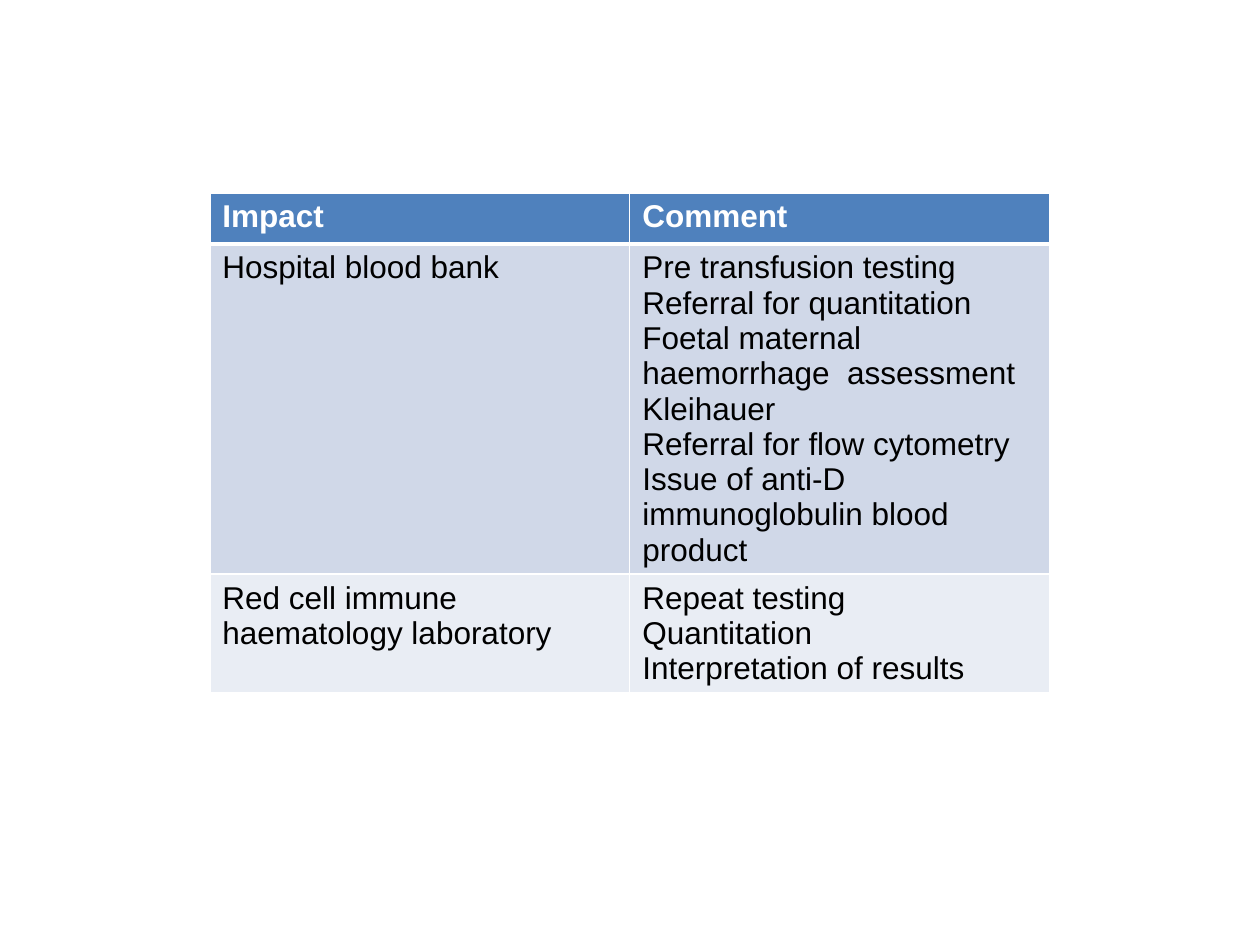
from lxml import etree
from pptx import Presentation
from pptx.dml.color import RGBColor
from pptx.oxml.ns import qn
from pptx.util import Cm, Pt

WHITE, BLACK = "FFFFFF", "000000"
HEADER_FILL, BAND_FILLS = "4F81BD", ("D0D8E8", "E9EDF4")
BORDER_TAGS = ("a:lnL", "a:lnR", "a:lnT", "a:lnB")

IMPACTS = [
    (["Impact"], ["Comment"]),
    (
        ["Hospital blood bank"],
        [
            "Pre transfusion testing",
            "Referral for quantitation",
            "Foetal maternal haemorrhage  assessment Kleihauer",
            "Referral for flow cytometry",
            "Issue of anti-D immunoglobulin blood product",
        ],
    ),
    (
        ["Red cell immune haematology laboratory"],
        ["Repeat testing", "Quantitation", "Interpretation of results"],
    ),
]
ROW_HEIGHTS = (1.03, 6.65, 2.37)


def color(hex_code):
    return RGBColor.from_string(hex_code)


class SlideBuilder:
    font_name = "Arial"
    font_size = Pt(18)

    def __init__(self, slide):
        self.slide = slide

    def border(self, cell, tag, width):
        properties = cell._tc.get_or_add_tcPr()
        line = etree.SubElement(properties, qn(tag), w=str(Pt(width)))
        fill = etree.SubElement(line, qn("a:solidFill"))
        etree.SubElement(fill, qn("a:srgbClr"), val=WHITE)

    def cell(self, cell, lines, fill, text_color, bold, rule_widths):
        for tag, width in zip(BORDER_TAGS, rule_widths):
            self.border(cell, tag, width)
        cell.fill.solid()
        cell.fill.fore_color.rgb = color(fill)
        cell.text = "\n".join(lines)
        for paragraph in cell.text_frame.paragraphs:
            paragraph.font.name = self.font_name
            paragraph.font.size = self.font_size
            paragraph.font.bold = bold
            paragraph.font.color.rgb = color(text_color)

    def table(self, rows, row_heights, left, top, width):
        table = self.slide.shapes.add_table(
            len(rows), len(rows[0]), Cm(left), Cm(top), Cm(width), Cm(sum(row_heights))
        ).table
        table.horz_banding = False
        for index, (entries, height) in enumerate(zip(rows, row_heights)):
            table.rows[index].height = Cm(height)
            header = index == 0
            fill = HEADER_FILL if header else BAND_FILLS[(index - 1) % 2]
            text_color = WHITE if header else BLACK
            rule_widths = (1, 1, 3 if index == 1 else 1, 3 if header else 1)
            for column, lines in enumerate(entries):
                self.cell(table.cell(index, column), lines, fill, text_color, header, rule_widths)


def main():
    presentation = Presentation()
    presentation.slide_width = Cm(25.4)
    presentation.slide_height = Cm(19.05)
    builder = SlideBuilder(presentation.slides.add_slide(presentation.slide_layouts[6]))
    builder.table(IMPACTS, ROW_HEIGHTS, left=4.23, top=3.89, width=16.93)
    presentation.save("out.pptx")


if __name__ == "__main__":
    main()
